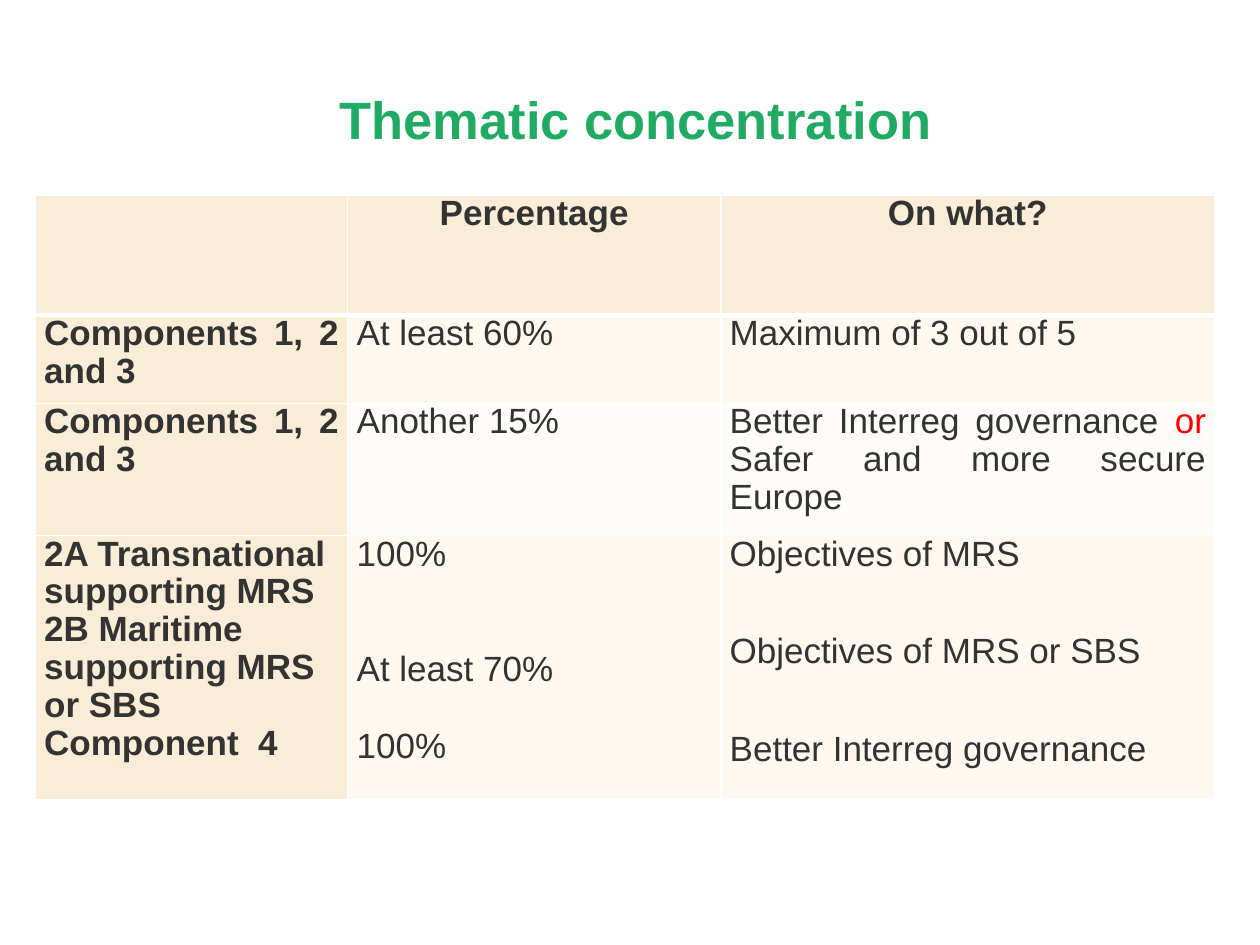
from typing import NamedTuple

from lxml.etree import SubElement
from pptx import Presentation
from pptx.dml.color import RGBColor
from pptx.enum.text import MSO_ANCHOR, PP_ALIGN
from pptx.oxml.ns import qn
from pptx.util import Cm, Pt

COLORS = {
    "title": "20AA63",
    "text": "333333",
    "accent": "FF0000",
    "heading": "FAEDD7",
    "odd_row": "FDF8F0",
    "even_row": "FEFCF8",
    "border": "FFFFFF",
}
FONT = "Arial"
LINE_SPACING = 0.97
LINE_POINTS = 22.3  # height of one 20 pt line
PARAGRAPH_GAP = 3


class Words(NamedTuple):
    text: str
    color: str = "text"


class Line(NamedTuple):
    words: list[Words]
    gap_before: float = 0


class Entry(NamedTuple):
    lines: list[Line]
    align: PP_ALIGN = PP_ALIGN.JUSTIFY


def entry(text: str, align: PP_ALIGN = PP_ALIGN.JUSTIFY) -> Entry:
    return Entry([Line([Words(text)])], align)


def stack(texts: list[str], gaps: list[float], align: PP_ALIGN) -> Entry:
    return Entry([Line([Words(t)], g) for t, g in zip(texts, gaps)], align)


# Content
OBJECTIVES_GAP = LINE_POINTS + 4 * PARAGRAPH_GAP
ROWS = [
    [Entry([]), entry("Percentage", PP_ALIGN.CENTER), entry("On what?", PP_ALIGN.CENTER)],
    [entry("Components 1, 2 and 3"), entry("At least 60%"), entry("Maximum of 3 out of 5")],
    [
        entry("Components 1, 2 and 3"),
        entry("Another 15%"),
        Entry([Line([
            Words("Better Interreg governance "),
            Words("or ", "accent"),
            Words("Safer and more secure Europe "),
        ])]),
    ],
    [
        stack(
            ["2A Transnational supporting MRS", "2B Maritime supporting MRS or SBS", "Component  4"],
            [0, 0, 0], PP_ALIGN.LEFT,
        ),
        stack(["100%", "At least 70%", "100%"], [0, 2 * LINE_POINTS, LINE_POINTS], PP_ALIGN.LEFT),
        stack(
            ["Objectives of MRS", "Objectives of MRS or SBS", "Better Interreg governance "],
            [0, OBJECTIVES_GAP, OBJECTIVES_GAP], PP_ALIGN.JUSTIFY,
        ),
    ],
]
COLUMN_WIDTHS = [6.3, 7.52, 9.96]
ROW_HEIGHTS = [2.41, 1.78, 2.67, 5.33]


def add_words(paragraph, words: Words, size: float, bold: bool) -> None:
    run = paragraph.add_run()
    run.text = words.text
    run.font.name = FONT
    run.font.size = Pt(size)
    run.font.bold = bold
    run.font.color.rgb = RGBColor.from_string(COLORS[words.color])


def add_borders(cell, top: float, bottom: float) -> None:
    properties = cell._tc.get_or_add_tcPr()
    for side, width in {"L": 1, "R": 1, "T": top, "B": bottom}.items():
        border = SubElement(properties, qn(f"a:ln{side}"), w=str(Pt(width)))
        fill = SubElement(border, qn("a:solidFill"))
        SubElement(fill, qn("a:srgbClr"), val=COLORS["border"])


def fill_cell(cell, content: Entry, fill: str, bold: bool) -> None:
    cell.fill.solid()
    cell.fill.fore_color.rgb = RGBColor.from_string(COLORS[fill])
    cell.margin_left = cell.margin_right = Cm(0.18)
    cell.margin_top = cell.margin_bottom = 0
    frame = cell.text_frame
    for index, line in enumerate(content.lines):
        paragraph = frame.add_paragraph() if index else frame.paragraphs[0]
        paragraph.alignment = content.align
        paragraph.line_spacing = LINE_SPACING
        if index:
            paragraph.space_before = Pt(line.gap_before)
        for words in line.words:
            add_words(paragraph, words, 20, bold)


def add_title(slide) -> None:
    title = slide.shapes.title
    title.left, title.top, title.width, title.height = Cm(1.5), Cm(1.52), Cm(22.63), Cm(2)
    frame = title.text_frame
    frame.vertical_anchor = MSO_ANCHOR.TOP
    frame.margin_top = Cm(0.23)
    frame.paragraphs[0].alignment = PP_ALIGN.CENTER
    add_words(frame.paragraphs[0], Words("Thematic concentration", "title"), 30, True)


def add_concentration_table(slide) -> None:
    table = slide.shapes.add_table(
        len(ROWS), len(COLUMN_WIDTHS), Cm(0.71), Cm(3.94),
        Cm(sum(COLUMN_WIDTHS)), Cm(sum(ROW_HEIGHTS)),
    ).table
    for column, width in zip(table.columns, COLUMN_WIDTHS):
        column.width = Cm(width)
    for row, height in zip(table.rows, ROW_HEIGHTS):
        row.height = Cm(height)
    for r, entries in enumerate(ROWS):
        for c, content in enumerate(entries):
            is_heading = r == 0 or c == 0
            band = "odd_row" if r % 2 else "even_row"
            cell = table.cell(r, c)
            add_borders(cell, top=3 if r == 1 else 1, bottom=3 if r == 0 else 1)
            fill_cell(cell, content, "heading" if is_heading else band, is_heading)


def main() -> None:
    presentation = Presentation()
    presentation.slide_width, presentation.slide_height = Cm(25.4), Cm(19.05)
    slide = presentation.slides.add_slide(presentation.slide_layouts[5])
    add_title(slide)
    add_concentration_table(slide)
    presentation.save("out.pptx")


if __name__ == "__main__":
    main()
